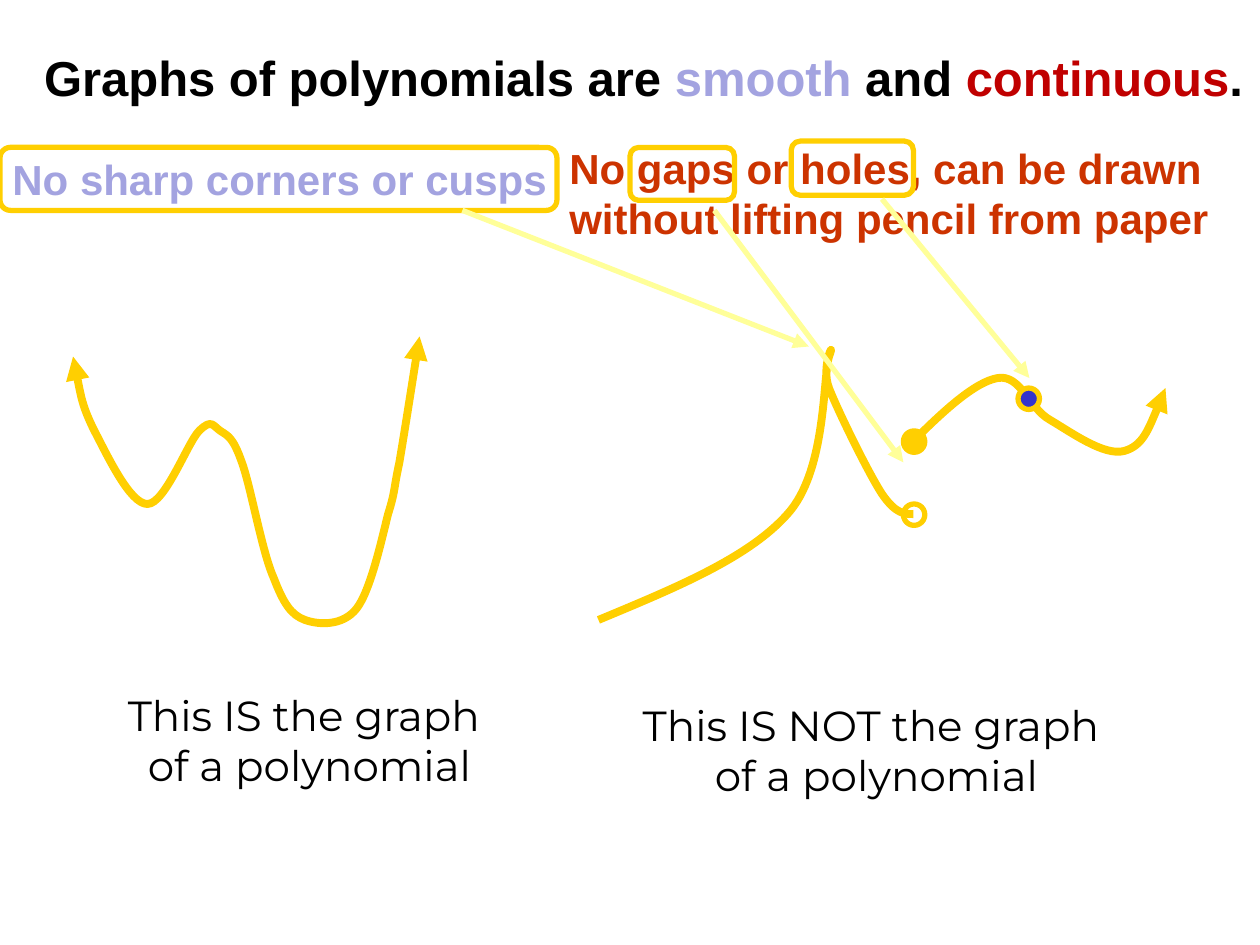
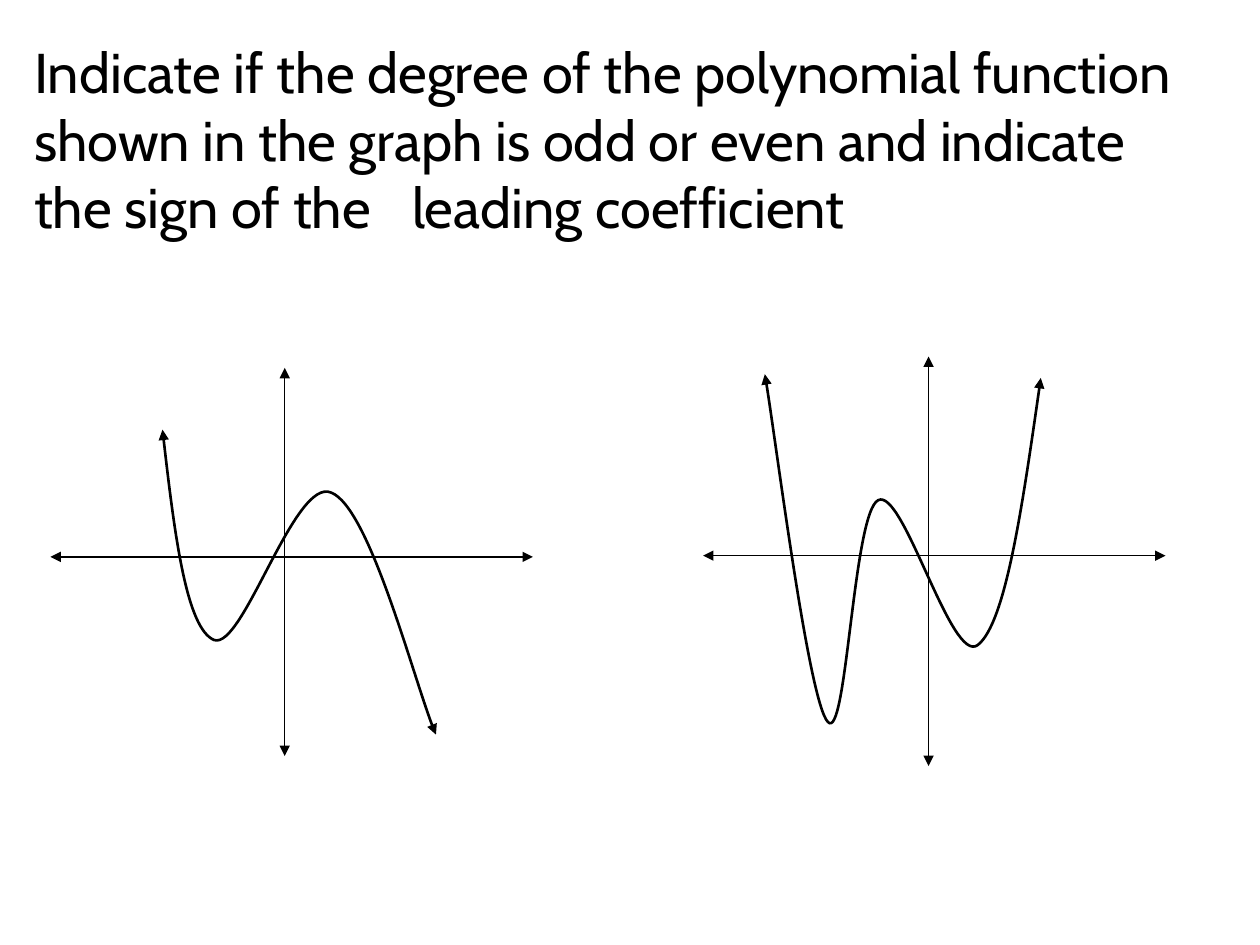
"""Build two slides on the shape, degree and leading coefficient of polynomial graphs."""
from dataclasses import dataclass

from lxml.etree import SubElement
from pptx import Presentation
from pptx.dml.color import RGBColor
from pptx.enum.shapes import MSO_CONNECTOR, MSO_SHAPE
from pptx.enum.text import MSO_ANCHOR, MSO_AUTO_SIZE, PP_ALIGN
from pptx.oxml.ns import qn
from pptx.shapes.autoshape import Shape
from pptx.shapes.connector import Connector
from pptx.shapes.shapetree import GroupShapes, SlideShapes
from pptx.slide import Slide
from pptx.util import Emu, Pt

STRAIGHT = MSO_CONNECTOR.STRAIGHT
ELLIPSE = MSO_SHAPE.OVAL
ROUNDED = MSO_SHAPE.ROUNDED_RECTANGLE
TOP = MSO_ANCHOR.TOP
GROW = MSO_AUTO_SIZE.SHAPE_TO_FIT_TEXT
LEFT, CENTER = PP_ALIGN.LEFT, PP_ALIGN.CENTER

PX = 9144
TITLE_ONLY = 5
DOT = 17

BLACK = RGBColor(0x00, 0x00, 0x00)
LILAC = RGBColor(0xA3, 0xA3, 0xE0)
CRIMSON = RGBColor(0xC0, 0x00, 0x00)
RUST = RGBColor(0xCC, 0x33, 0x00)
GOLD = RGBColor(0xFF, 0xCF, 0x01)
PALE_YELLOW = RGBColor(0xFF, 0xFF, 0x99)
BLUE = RGBColor(0x33, 0x33, 0xCC)

Point = tuple[int, int]
Box = tuple[int, int, int, int]
Shapes = SlideShapes | GroupShapes


@dataclass(frozen=True)
class TextStyle:
    font: str
    size: int
    bold: bool = False
    align: PP_ALIGN = LEFT


@dataclass(frozen=True)
class Stroke:
    color: RGBColor
    width: float
    head: bool = False
    tail: bool = False


@dataclass(frozen=True)
class Curve:
    """A start point followed by two controls and a knot for each cubic piece."""
    points: list[Point]
    stroke: Stroke


@dataclass(frozen=True)
class Label:
    text: str
    box: Box
    style: TextStyle
    color: RGBColor


@dataclass(frozen=True)
class Graph:
    vertical: tuple[Point, Point]
    horizontal: tuple[Point, Point]
    curve: Curve


HEADLINE = TextStyle("Arial", 28, bold=True)
CLAIM = TextStyle("Arial", 24, bold=True)
CAPTION = TextStyle("Montserrat", 24, align=CENTER)
QUESTION = TextStyle("Cabin", 32)

OUTLINE = Stroke(GOLD, 3)
POINTER = Stroke(PALE_YELLOW, 3, tail=True)
AXIS = Stroke(BLACK, 0.75, head=True, tail=True)
PLOT = Stroke(BLACK, 1.5, head=True, tail=True)

HEADLINE_PARTS = [
    ("Graphs of polynomials are ", BLACK),
    ("smooth", LILAC),
    (" and ", BLACK),
    ("continuous", CRIMSON),
    (".", BLACK),
]
QUESTION_PARTS = [
    ("Indicate if the degree of the polynomial function shown in the graph is odd or even "
     "and indicate the sign of the \tleading coefficient", BLACK),
]
LABELS = [
    Label("No sharp corners or cusps", (0, 117, 608, 50), CLAIM, LILAC),
    Label("No gaps or holes, can be drawn without lifting pencil from paper",
          (442, 108, 558, 90), CLAIM, RUST),
    Label("This IS the graph \vof a polynomial", (33, 542, 425, 90), CAPTION, BLACK),
    Label("This IS NOT the graph \vof a polynomial", (483, 550, 425, 90), CAPTION, BLACK),
]
SMOOTH_CURVE = Curve([
    (58, 283), (62, 303), (65, 322), (75, 342), (85, 361), (103, 400), (117, 400),
    (131, 400), (149, 351), (158, 342), (168, 332), (169, 338), (175, 342),
    (181, 346), (185, 347), (192, 367), (199, 386), (208, 438), (217, 458),
    (225, 479), (231, 488), (242, 492), (253, 496), (272, 497), (283, 483),
    (294, 469), (303, 428), (308, 408), (314, 389), (312, 390), (317, 367),
    (321, 343), (327, 305), (333, 267),
], Stroke(GOLD, 4.5, head=True, tail=True))
CUSP_CURVE = Curve([
    (475, 492), (535, 467), (594, 443), (625, 408), (656, 374), (653, 300), (658, 283),
    (664, 267), (651, 290), (658, 308), (665, 326), (689, 375), (700, 392),
    (711, 408), (718, 408), (725, 408),
], Stroke(GOLD, 4.5))
HOLE_CURVE = Curve([
    (725, 350), (749, 326), (774, 303), (792, 300), (810, 297), (817, 324), (833, 333),
    (850, 343), (876, 362), (892, 358), (907, 354), (916, 331), (925, 308),
], Stroke(GOLD, 4.5, tail=True))
GAP_DOTS = [((717, 400), None), ((717, 342), GOLD), ((808, 308), BLUE)]
KEYWORD_FRAMES = [(0, 117, 442, 50), (500, 117, 83, 42), (628, 112, 97, 43)]
POINTERS = [((367, 167), (642, 275)), ((567, 167), (717, 367)), ((700, 158), (817, 300))]

GRAPHS = [
    Graph(((226, 292), (226, 600)), ((40, 442), (423, 442)), Curve([
        (129, 341), (138, 420), (148, 499), (170, 508), (193, 516), (234, 378), (263, 391),
        (293, 403), (331, 549), (346, 583),
    ], PLOT)),
    Graph(((737, 283), (737, 608)), ((558, 441), (925, 441)), Curve([
        (607, 297), (615, 343), (642, 557), (657, 573), (672, 590), (677, 407), (697, 397),
        (717, 387), (755, 528), (776, 512), (798, 495), (812, 398), (826, 300),
    ], PLOT)),
]


def emu(*lengths: int) -> list[Emu]:
    """Turn px lengths into EMU."""
    return [Emu(length * PX) for length in lengths]


def apply_stroke(shape: Shape | Connector, stroke: Stroke) -> None:
    """Set line colour, width and arrowheads."""
    shape.line.color.rgb = stroke.color
    shape.line.width = Pt(stroke.width)
    line = shape.element.spPr.find(qn("a:ln"))
    for end, shown in (("a:headEnd", stroke.head), ("a:tailEnd", stroke.tail)):
        if shown:
            SubElement(line, qn(end), type="triangle")


def set_text(shape: Shape, parts: list[tuple[str, RGBColor]], style: TextStyle) -> None:
    """Fill a shape with one paragraph of coloured parts."""
    frame = shape.text_frame
    frame.word_wrap = True
    frame.auto_size = GROW
    frame.vertical_anchor = TOP
    paragraph = frame.paragraphs[0]
    paragraph.alignment = style.align
    for text, color in parts:
        known = len(paragraph.runs)
        if len(parts) == 1:
            paragraph.text = text
        else:
            paragraph.add_run().text = text
        for run in paragraph.runs[known:]:
            run.font.name = style.font
            run.font.size = Pt(style.size)
            run.font.bold = style.bold
            run.font.color.rgb = color


def set_title(slide: Slide, parts: list[tuple[str, RGBColor]], box: Box,
              style: TextStyle) -> None:
    """Place and fill the title placeholder."""
    title = slide.shapes.title
    title.left, title.top, title.width, title.height = emu(*box)
    set_text(title, parts, style)


def add_label(shapes: Shapes, label: Label) -> None:
    """Add a wrapped text box."""
    set_text(shapes.add_textbox(*emu(*label.box)), [(label.text, label.color)], label.style)


def add_outlined(shapes: Shapes, kind: MSO_SHAPE, box: Box, fill: RGBColor | None) -> None:
    """Add a gold-outlined preset shape."""
    shape = shapes.add_shape(kind, *emu(*box))
    shape.shadow.inherit = False
    if fill is None:
        shape.fill.background()
    else:
        shape.fill.solid()
        shape.fill.fore_color.rgb = fill
    apply_stroke(shape, OUTLINE)


def add_line(shapes: Shapes, start: Point, end: Point, stroke: Stroke) -> None:
    """Add a straight connector without a shadow."""
    connector = shapes.add_connector(STRAIGHT, *emu(*start, *end))
    apply_stroke(connector, stroke)
    SubElement(connector.element.spPr, qn("a:effectLst"))


def add_curve(shapes: Shapes, curve: Curve) -> None:
    """Add a freeform through the knots and bend its segments into cubic pieces."""
    points = curve.points
    knots = points[::3]
    builder = shapes.build_freeform(*knots[0], scale=PX)
    builder.add_line_segments(knots[1:], close=False)
    shape = builder.convert_to_shape()
    left, top = min(x for x, _ in knots), min(y for _, y in knots)
    segments = list(shape.element.iter(qn("a:lnTo")))
    for index, segment in enumerate(segments):
        piece = points[3 * index + 1:3 * index + 4]
        bend = SubElement(segment.getparent(), qn("a:cubicBezTo"))
        for x, y in piece:
            SubElement(bend, qn("a:pt"), x=str(x - left), y=str(y - top))
        segment.getparent().replace(segment, bend)
    shape.shadow.inherit = False
    shape.fill.background()
    apply_stroke(shape, curve.stroke)


def add_graph(slide: Slide, graph: Graph) -> None:
    """Add a group with two axes and a plotted curve."""
    shapes = slide.shapes.add_group_shape().shapes
    for start, end in (graph.vertical, graph.horizontal):
        add_line(shapes, start, end, AXIS)
    add_curve(shapes, graph.curve)


def build_smooth_slide(slide: Slide) -> None:
    """Contrast a polynomial graph with one that has a cusp, a gap and a hole."""
    shapes = slide.shapes
    set_title(slide, HEADLINE_PARTS, (25, 33, 975, 57), HEADLINE)
    for label in LABELS:
        add_label(shapes, label)
    for curve in (SMOOTH_CURVE, CUSP_CURVE, HOLE_CURVE):
        add_curve(shapes, curve)
    for corner, fill in GAP_DOTS:
        add_outlined(shapes, ELLIPSE, (*corner, DOT, DOT), fill)
    for frame in KEYWORD_FRAMES:
        add_outlined(shapes, ROUNDED, frame, None)
    for start, end in POINTERS:
        add_line(shapes, start, end, POINTER)


def build_degree_slide(slide: Slide) -> None:
    """Ask for the degree and leading sign of two graphs."""
    set_title(slide, QUESTION_PARTS, (17, 25, 950, 172), QUESTION)
    for graph in GRAPHS:
        add_graph(slide, graph)


def main() -> None:
    """Build and save the slides."""
    deck = Presentation()
    deck.slide_width, deck.slide_height = emu(1000, 750)
    for build in (build_smooth_slide, build_degree_slide):
        build(deck.slides.add_slide(deck.slide_layouts[TITLE_ONLY]))
    deck.save("out.pptx")


if __name__ == "__main__":
    main()
